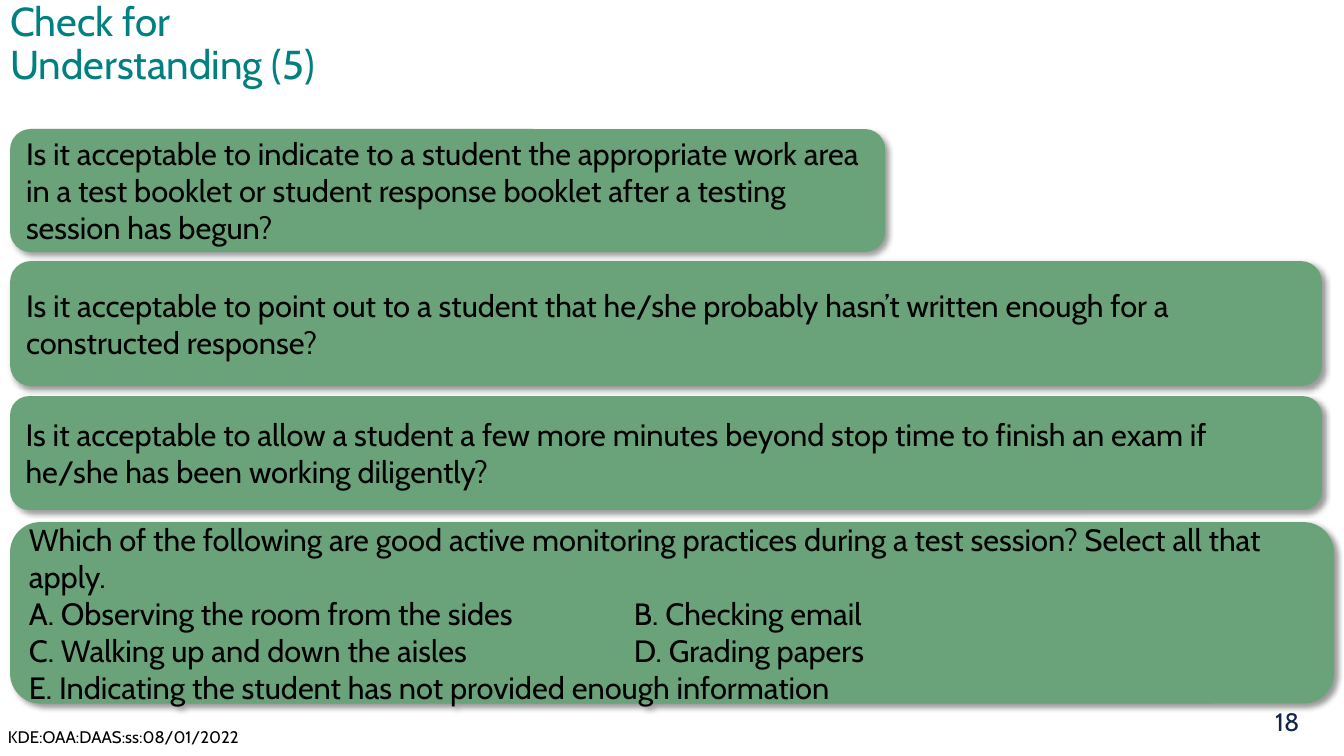
from lxml import etree
from pptx import Presentation
from pptx.dml.color import RGBColor
from pptx.enum.shapes import MSO_SHAPE
from pptx.enum.text import MSO_ANCHOR, MSO_AUTO_SIZE, PP_ALIGN
from pptx.oxml.ns import qn
from pptx.util import Inches, Pt

ROUNDED = MSO_SHAPE.ROUNDED_RECTANGLE
TOP, MIDDLE, BOTTOM = MSO_ANCHOR.TOP, MSO_ANCHOR.MIDDLE, MSO_ANCHOR.BOTTOM
LEFT, CENTER = PP_ALIGN.LEFT, PP_ALIGN.CENTER
NO_AUTOFIT = MSO_AUTO_SIZE.NONE

# Content
FONT = "Cabin"
COLORS = {"title": "008080", "card": "6AA27A", "text": "000000", "number": "102649"}
TITLE = "Check for Understanding (5)"
FOOTER = "KDE:OAA:DAAS:ss:08/01/2022"
PAGE = "18"
CARD_LEFT = 0.1
ANSWER_TAB = 6.0

# Question cards: top, width, height, lines
CARDS = [
    (1.28, 8.68, 1.22, ["Is it acceptable to indicate to a student the appropriate work area in a "
                        "test booklet or student response booklet after a testing session has begun?"]),
    (2.59, 13.01, 1.24, ["Is it acceptable to point out to a student that he/she probably hasn’t "
                         "written enough for a constructed response?"]),
    (3.93, 13.01, 1.13, ["Is it acceptable to allow a student a few more minutes beyond stop time "
                         "to finish an exam if he/she has been working diligently?"]),
    (5.18, 13.13, 1.8, ["Which of the following are good active monitoring practices during a test "
                        "session? Select all that apply.",
                        "A. Observing the room from the sides\tB. Checking email",
                        "C. Walking up and down the aisles\tD. Grading papers",
                        "E. Indicating the student has not provided enough information"]),
]


def write(sp, lines, size=22, color="text", align=LEFT, anchor=MIDDLE, spacing=None):
    tf = sp.text_frame
    tf.word_wrap = True
    tf.auto_size = NO_AUTOFIT
    tf.vertical_anchor = anchor
    for i, line in enumerate(lines):
        p = tf.paragraphs[0] if i == 0 else tf.add_paragraph()
        p.alignment = align
        if spacing:
            p.line_spacing = spacing
        if "\t" in line:
            tabs = etree.SubElement(p._p.get_or_add_pPr(), qn("a:tabLst"))
            etree.SubElement(tabs, qn("a:tab"), pos=str(Inches(ANSWER_TAB)), algn="l")
        r = p.add_run()
        r.text = line
        r.font.name = FONT
        r.font.size = Pt(size)
        r.font.color.rgb = RGBColor.from_string(COLORS[color])


def add_shadow(sp):
    sp.shadow.inherit = False
    effects = sp._element.spPr.find(qn("a:effectLst"))
    shadow = etree.SubElement(effects, qn("a:outerShdw"), blurRad=str(Pt(4)), dist=str(Pt(3)),
                              dir=str(45 * 60000), algn="tl", rotWithShape="0")
    black = etree.SubElement(shadow, qn("a:srgbClr"), val="000000")
    etree.SubElement(black, qn("a:alpha"), val="40000")


def add_card(s, top, width, height, lines):
    sp = s.shapes.add_shape(ROUNDED, Inches(CARD_LEFT), Inches(top), Inches(width), Inches(height))
    sp.fill.solid()
    sp.fill.fore_color.rgb = RGBColor.from_string(COLORS["card"])
    sp.line.fill.background()
    add_shadow(sp)
    write(sp, lines)


def add_label(s, left, top, width, height, text, **style):
    sp = s.shapes.add_textbox(Inches(left), Inches(top), Inches(width), Inches(height))
    write(sp, [text], **style)


def main():
    prs = Presentation()
    prs.slide_width, prs.slide_height = Inches(13.33), Inches(7.5)
    s = prs.slides.add_slide(prs.slide_layouts[5])

    # Title
    title = s.shapes.title
    title.left, title.top = Inches(0), Inches(0.07)
    title.width, title.height = Inches(4.3), Inches(0.86)
    write(title, [TITLE], size=28.8, color="title", anchor=BOTTOM, spacing=0.9)

    # Questions
    for card in CARDS:
        add_card(s, *card)

    # Footer and page number
    add_label(s, -0.27, 7.11, 2.99, 0.39, FOOTER, size=12, align=CENTER)
    add_label(s, 12.55, 6.96, 0.56, 0.39, PAGE, size=18, color="number", anchor=TOP)

    prs.save("out.pptx")


if __name__ == "__main__":
    main()
